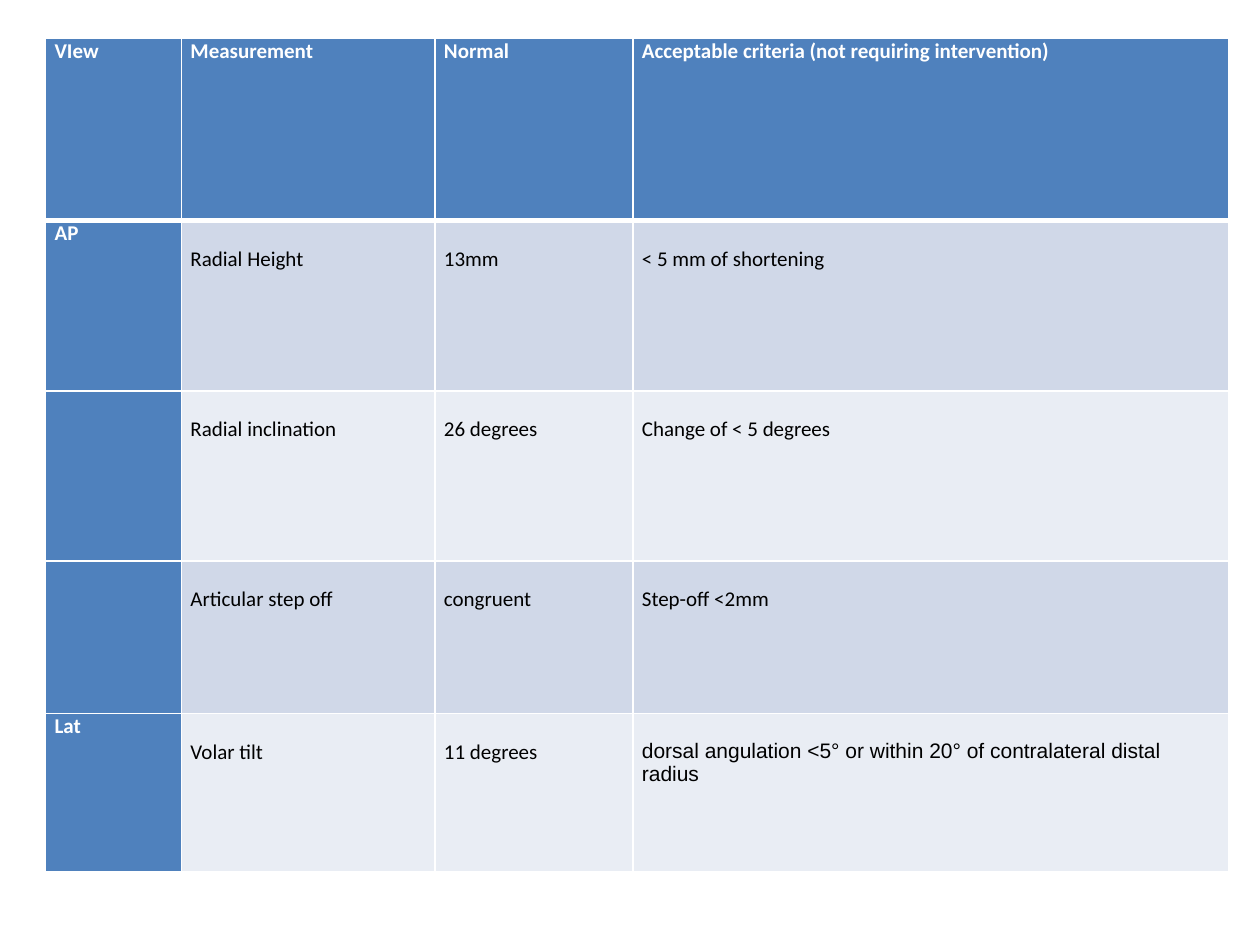
"""Build a slide with a table of wrist radiograph measurements."""
from dataclasses import dataclass

from lxml.etree import SubElement
from pptx import Presentation
from pptx.dml.color import RGBColor
from pptx.oxml.ns import qn
from pptx.table import _Cell as Cell
from pptx.util import Cm, Pt

WHITE = RGBColor(0xFF, 0xFF, 0xFF)
BLACK = RGBColor(0x00, 0x00, 0x00)
BLUE = RGBColor(0x4F, 0x81, 0xBD)
BAND_FILLS = (RGBColor(0xD0, 0xD8, 0xE8), RGBColor(0xE9, 0xED, 0xF4))

COLUMN_WIDTHS = (2.74, 5.11, 3.99, 12.01)
SIDE_MARGIN = Cm(0.18)
BODY_TOP_MARGIN = Cm(0.52)
THIN, THICK = Pt(1), Pt(3)


@dataclass(frozen=True)
class MeasurementRow:
    """Texts and height in centimetres of one table row."""

    height: float
    view: str
    measurement: str
    normal: str
    criteria: str
    criteria_font: str = "Calibri"

    def texts(self) -> tuple[str, ...]:
        """Return the cell texts from left to right."""
        return self.view, self.measurement, self.normal, self.criteria


ROWS = (
    MeasurementRow(3.68, "VIew", "Measurement", "Normal",
                   "Acceptable criteria (not requiring intervention)"),
    MeasurementRow(3.43, "AP", "Radial Height", "13mm", "< 5 mm of shortening"),
    MeasurementRow(3.43, "", "Radial inclination", "26 degrees", "Change of < 5 degrees"),
    MeasurementRow(3.07, "", "Articular step off", "congruent", "Step-off <2mm"),
    MeasurementRow(3.2, "Lat", "Volar tilt", "11 degrees",
                   "dorsal angulation <5° or within 20° of contralateral distal radius",
                   "Arial"),
)


def set_borders(cell: Cell, top: int, bottom: int) -> None:
    """Give a cell white borders, thin at the sides."""
    properties = cell._tc.get_or_add_tcPr()
    for side, width in (("L", THIN), ("R", THIN), ("T", top), ("B", bottom)):
        line = SubElement(properties, qn(f"a:ln{side}"), w=str(width))
        fill = SubElement(line, qn("a:solidFill"))
        SubElement(fill, qn("a:srgbClr"), val=str(WHITE))


def fill_cell(cell: Cell, text: str, font_name: str, fill: RGBColor, heading: bool) -> None:
    """Write the text of a cell and format it as heading or body."""
    cell.margin_left = cell.margin_right = SIDE_MARGIN
    cell.margin_top = 0 if heading else BODY_TOP_MARGIN
    cell.margin_bottom = 0
    cell.fill.solid()
    cell.fill.fore_color.rgb = fill
    if not text:
        return
    cell.text_frame.text = text
    font = cell.text_frame.paragraphs[0].runs[0].font
    font.name = font_name
    font.size = Pt(12)
    font.bold = heading
    font.color.rgb = WHITE if heading else BLACK


def main() -> None:
    """Create and save the presentation."""
    presentation = Presentation()
    presentation.slide_width, presentation.slide_height = Cm(25.4), Cm(19.05)
    slide = presentation.slides.add_slide(presentation.slide_layouts[6])
    table = slide.shapes.add_table(
        len(ROWS), len(COLUMN_WIDTHS), Cm(0.92), Cm(0.77),
        Cm(sum(COLUMN_WIDTHS)), Cm(sum(row.height for row in ROWS))).table
    table.first_col = True
    for column, width in zip(table.columns, COLUMN_WIDTHS):
        column.width = Cm(width)
    for row_index, row in enumerate(ROWS):
        table.rows[row_index].height = Cm(row.height)
        for column_index, text in enumerate(row.texts()):
            cell = table.cell(row_index, column_index)
            heading = row_index == 0 or column_index == 0
            is_criteria = column_index == len(COLUMN_WIDTHS) - 1
            set_borders(cell, THICK if row_index == 1 else THIN,
                        THICK if row_index == 0 else THIN)
            fill_cell(cell, text, row.criteria_font if is_criteria else "Calibri",
                      BLUE if heading else BAND_FILLS[(row_index - 1) % 2], heading)
    presentation.save("out.pptx")


if __name__ == "__main__":
    main()
